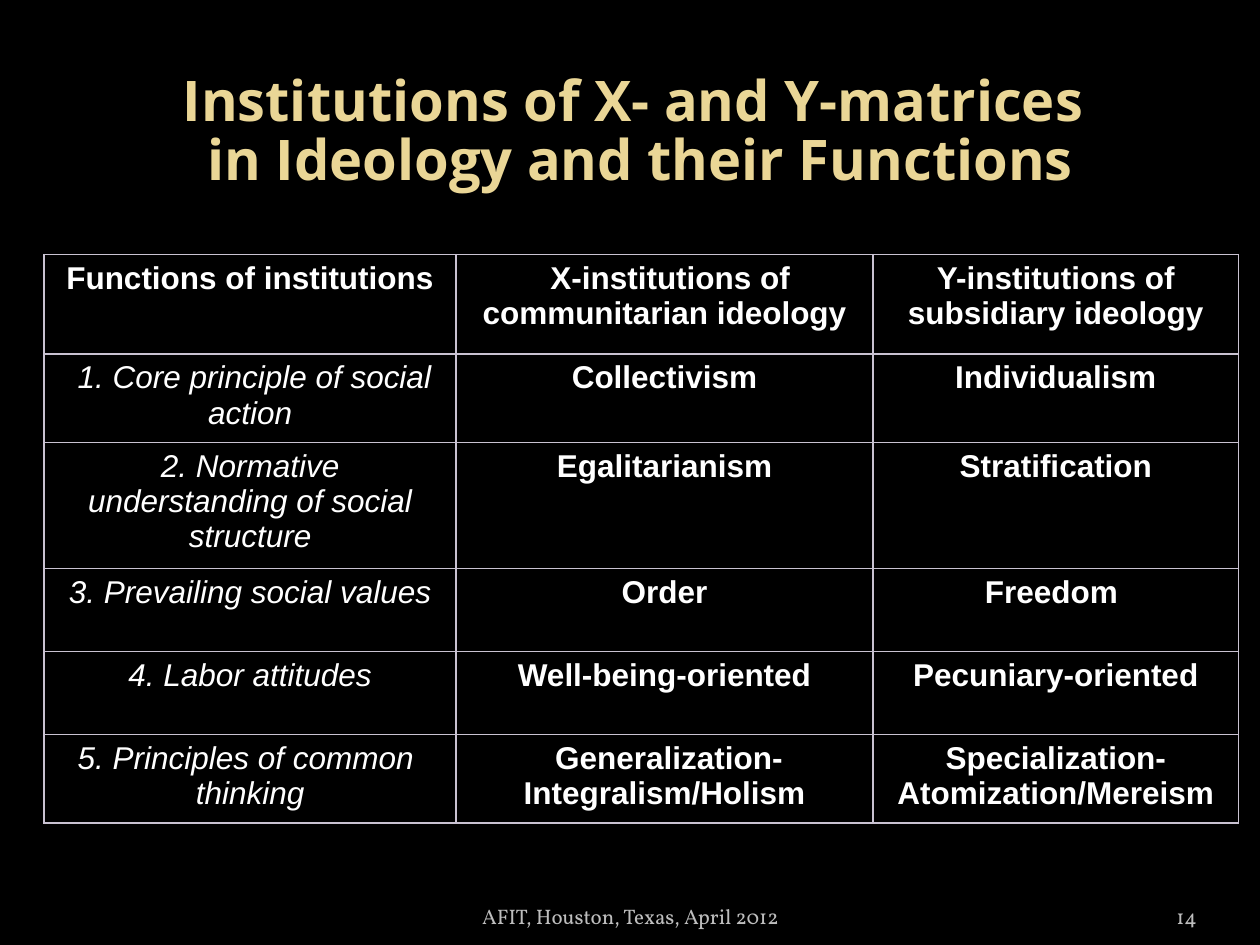
from dataclasses import dataclass

from lxml import etree
from pptx import Presentation
from pptx import util as u
from pptx.dml import color
from pptx.enum import text
from pptx.oxml import ns


@dataclass(frozen=True)
class Theme:
    """Colours, fonts and type sizes of the slide."""
    back: str = "000000"
    gold: str = "EAD696"
    ink: str = "FFFFFF"
    grey: str = "BDBDBD"
    rule: str = "C9C2D1"
    head: str = "Open Sans"
    body: str = "Arial"
    foot: str = "Vollkorn"
    big: int = 32
    mid: int = 18
    small: int = 12


THEME = Theme()
MID, RIGHT = text.PP_ALIGN.CENTER, text.PP_ALIGN.RIGHT
WIDTHS = (3.27, 3.31, 2.9)
HEIGHTS = (0.79, 0.66, 0.94, 0.66, 0.66, 0.66)
ROWS = (
    ("Functions of institutions", "X-institutions of communitarian ideology",
     "Y-institutions of subsidiary ideology"),
    (" 1. Core principle of social action", "Collectivism", "Individualism"),
    ("2. Normative understanding of social structure", "Egalitarianism", "Stratification"),
    ("3. Prevailing social values", "Order", "Freedom "),
    ("4. Labor attitudes", "Well-being-oriented", "Pecuniary-oriented"),
    ("5. Principles of common  thinking", " Generalization-Integralism/Holism",
     "Specialization-Atomization/Mereism"),
)


def apply(item, props):
    """Set each named attribute on an item."""
    for name, value in props.items():
        setattr(item, name, value)


def write(frame, words, hue, align=MID, **font):
    """Write one styled paragraph into a text frame and return it."""
    para = frame.paragraphs[0]
    para.text = words
    para.alignment = align
    for run in para.runs:
        apply(run.font, font)
        run.font.color.rgb = color.RGBColor.from_string(hue)
    return para


def add_text(slide, box, words, hue, anchor, align=MID, inset=0.1, **font):
    """Place a wrapped text box and return its paragraph."""
    frame = slide.shapes.add_textbox(*map(u.Inches, box)).text_frame
    apply(frame, {"word_wrap": True, "vertical_anchor": anchor,
                  "margin_left": u.Inches(inset), "margin_right": u.Inches(inset)})
    return write(frame, words, hue, align, **font)


def add_title(slide, box):
    """Place the two-line title."""
    para = add_text(slide, box,
                    "Institutions of X- and Y-matrices \vin Ideology and their Functions",
                    THEME.gold, text.MSO_ANCHOR.MIDDLE,
                    name=THEME.head, size=u.Pt(THEME.big), bold=True)
    para.line_spacing = 0.88


def rule_cell(cell):
    """Draw a thin line on all four sides of a cell."""
    props = cell._tc.get_or_add_tcPr()
    for spot, side in enumerate(("lnL", "lnR", "lnT", "lnB")):
        line = etree.Element(ns.qn(f"a:{side}"), w=str(u.Pt(1)))
        fill = etree.SubElement(line, ns.qn("a:solidFill"))
        etree.SubElement(fill, ns.qn("a:srgbClr"), val=THEME.rule)
        props.insert(spot, line)


def add_grid(slide, left, top):
    """Place the table of institutions and functions."""
    box = map(u.Inches, (left, top, sum(WIDTHS), sum(HEIGHTS)))
    table = slide.shapes.add_table(len(ROWS), len(WIDTHS), *box).table
    apply(table, {"first_row": False, "horz_banding": False})
    for col, width in zip(table.columns, WIDTHS):
        col.width = u.Inches(width)
    for r, (row, height) in enumerate(zip(ROWS, HEIGHTS)):
        table.rows[r].height = u.Inches(height)
        for c, words in enumerate(row):
            cell = table.cell(r, c)
            label = r > 0 and c == 0
            cell.fill.background()
            rule_cell(cell)
            para = write(cell.text_frame, words, THEME.ink, name=THEME.body,
                         size=u.Pt(THEME.mid), bold=not label, italic=label)
            if (r, c) == (0, 1):
                para._p.get_or_add_pPr().set("indent", str(u.Inches(0.09)))


def add_foot(slide, top, height):
    """Place the event name and the page number."""
    font = {"name": THEME.foot, "size": u.Pt(THEME.small)}
    low = text.MSO_ANCHOR.BOTTOM
    add_text(slide, (8.67, top, 0.83, height), "14", THEME.grey, low, RIGHT, 0, **font)
    add_text(slide, (3.42, top, 3.17, height), "AFIT, Houston, Texas, April 2012",
             THEME.grey, low, **font)


def main():
    """Build and save the slide."""
    deck = Presentation()
    apply(deck, {"slide_width": u.Inches(10), "slide_height": u.Inches(7.5)})
    slide = deck.slides.add_slide(deck.slide_layouts[6])
    fill = slide.background.fill
    fill.solid()
    fill.fore_color.rgb = color.RGBColor.from_string(THEME.back)
    add_title(slide, (0.5, 0.27, 9.17, 1.57))
    add_grid(slide, 0.35, 2.02)
    add_foot(slide, 7.02, 0.4)
    deck.save("out.pptx")


if __name__ == "__main__":
    main()
